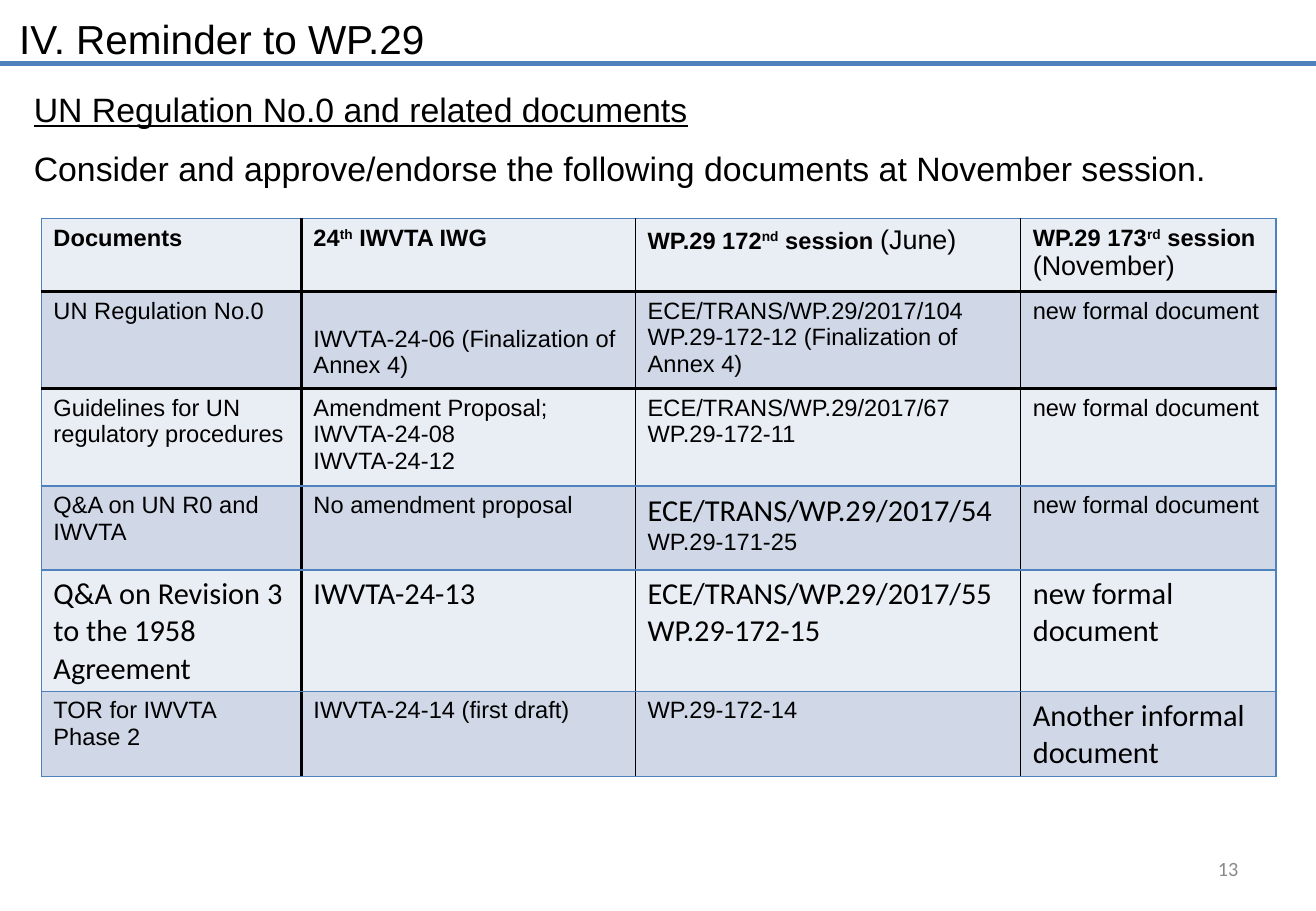
from dataclasses import dataclass, field

from lxml import etree
from pptx import Presentation
from pptx.dml.color import RGBColor
from pptx.enum.shapes import MSO_CONNECTOR
from pptx.enum.text import MSO_ANCHOR, PP_ALIGN
from pptx.oxml.ns import qn
from pptx.util import Inches, Pt

STRAIGHT = MSO_CONNECTOR.STRAIGHT
MIDDLE = MSO_ANCHOR.MIDDLE
TOP = MSO_ANCHOR.TOP
LEFT = PP_ALIGN.LEFT
RIGHT = PP_ALIGN.RIGHT

COLUMNS, ROWS = 108.3, 75


@dataclass(frozen=True)
class Theme:
    black: str = "000000"
    blue: str = "4F81BD"
    bands: tuple = ("E9EDF4", "D0D8E8")
    rule_width: float = 3
    styles: dict = field(default_factory=lambda: {
        "title": {"name": "Arial", "size": Pt(24)},
        "topic": {"name": "Arial", "size": Pt(20), "underline": True},
        "request": {"name": "Arial", "size": Pt(20)},
        "header": {"name": "Arial", "size": Pt(14), "bold": True},
        "ordinal": {"name": "Arial", "size": Pt(14), "bold": True},
        "month": {"name": "Arial", "size": Pt(16), "bold": False},
        "entry": {"name": "Arial", "size": Pt(14), "bold": False},
        "large": {"name": "Calibri", "size": Pt(18), "bold": False},
        "number": {"name": "Calibri", "size": Pt(12)},
    })
    colors: dict = field(default_factory=lambda: {"number": "898989"})


THEME = Theme()
HAIRLINE = (THEME.black, 0.75)
HEAVY = (THEME.black, 2.25)
OUTLINE = (THEME.blue, 1)
COLUMN_EDGES = [OUTLINE, HEAVY, HAIRLINE, HAIRLINE, OUTLINE]
ROW_EDGES = [OUTLINE, HEAVY, HEAVY, OUTLINE, OUTLINE, OUTLINE, OUTLINE]
COLUMN_WIDTHS = [21.4, 27.5, 31.7, 21]
ROW_HEIGHTS = [6, 8, 8, 6.9, 10, 7]
ANNEX_CELL = (1, 1)
ANNEX_TOP = 2.8


def entry(*lines):
    return [[(line, "entry")] for line in lines]


def large(*lines):
    return [[(line, "large")] for line in lines]


def session(number, ordinal, label, month=""):
    runs = [(number, "header"), (ordinal, "ordinal"), (label, "header")]
    return [runs + ([(month, "month")] if month else [])]


DOCUMENTS = [
    [[[("Documents", "header")]],
     session("24", "th", " IWVTA IWG"),
     session("WP.29 172", "nd", " session ", "(June)"),
     session("WP.29 173", "rd", " session ", "(November)")],
    [entry("UN Regulation No.0"),
     entry("IWVTA-24-06 (Finalization of Annex 4)"),
     entry("ECE/TRANS/WP.29/2017/104", "WP.29-172-12 (Finalization of Annex 4)"),
     entry("new formal document")],
    [entry("Guidelines for UN regulatory procedures"),
     entry("Amendment Proposal;", "IWVTA-24-08", "IWVTA-24-12"),
     entry("ECE/TRANS/WP.29/2017/67", "WP.29-172-11"),
     entry("new formal document")],
    [entry("Q&A on UN R0 and IWVTA"),
     entry("No amendment proposal"),
     large("ECE/TRANS/WP.29/2017/54") + entry("WP.29-171-25"),
     entry("new formal document")],
    [large("Q&A on Revision 3", "to the 1958 Agreement"),
     large("IWVTA-24-13"),
     large("ECE/TRANS/WP.29/2017/55", "WP.29-172-15"),
     large("new formal document")],
    [entry("TOR for IWVTA Phase 2"),
     entry("IWVTA-24-14 (first draft)"),
     entry("WP.29-172-14"),
     large("Another informal document")],
]


def grid(units):
    return Inches(units / 10)


def apply_format(target, values):
    for name, value in values.items():
        setattr(target, name, value)


def write_paragraphs(text_frame, paragraphs, **paragraph_format):
    for index, runs in enumerate(paragraphs):
        paragraph = text_frame.add_paragraph() if index else text_frame.paragraphs[0]
        apply_format(paragraph, paragraph_format)
        for text, style in runs:
            run = paragraph.add_run()
            run.text = text
            apply_format(run.font, THEME.styles[style])
            run.font.color.rgb = RGBColor.from_string(THEME.colors.get(style, THEME.black))
            if style == "ordinal":
                run._r.get_or_add_rPr().set("baseline", "30000")


def add_text(slide, box, paragraphs, anchor=TOP, **paragraph_format):
    shape = slide.shapes.add_textbox(*map(grid, box))
    apply_format(shape.text_frame, {"word_wrap": True, "vertical_anchor": anchor})
    write_paragraphs(shape.text_frame, paragraphs, **paragraph_format)


def add_rule(slide, row):
    connector = slide.shapes.add_connector(STRAIGHT, 0, grid(row), grid(COLUMNS), grid(row))
    connector.line.color.rgb = RGBColor.from_string(THEME.blue)
    connector.line.width = Pt(THEME.rule_width)
    etree.SubElement(connector._element.spPr, qn("a:effectLst"))


def set_borders(cell, edges):
    properties = cell._tc.get_or_add_tcPr()
    for side, (color, width) in edges.items():
        line = etree.SubElement(properties, qn(f"a:ln{side}"), w=str(Pt(width)))
        fill = etree.SubElement(line, qn("a:solidFill"))
        etree.SubElement(fill, qn("a:srgbClr"), val=color)


def add_documents_table(slide, left, top):
    table = slide.shapes.add_table(
        len(ROW_HEIGHTS), len(COLUMN_WIDTHS), grid(left), grid(top),
        grid(sum(COLUMN_WIDTHS)), grid(sum(ROW_HEIGHTS))).table
    apply_format(table, {"first_row": False, "horz_banding": False})
    for column, width in zip(table.columns, COLUMN_WIDTHS):
        column.width = grid(width)
    for row, height in zip(table.rows, ROW_HEIGHTS):
        row.height = grid(height)
    for row, contents in enumerate(DOCUMENTS):
        for column, paragraphs in enumerate(contents):
            cell = table.cell(row, column)
            write_paragraphs(cell.text_frame, paragraphs)
            set_borders(cell, {"L": COLUMN_EDGES[column], "R": COLUMN_EDGES[column + 1],
                               "T": ROW_EDGES[row], "B": ROW_EDGES[row + 1]})
            cell.fill.solid()
            cell.fill.fore_color.rgb = RGBColor.from_string(THEME.bands[row % 2])
    table.cell(*ANNEX_CELL).margin_top = grid(ANNEX_TOP)


def main():
    presentation = Presentation()
    apply_format(presentation, {"slide_width": grid(COLUMNS), "slide_height": grid(ROWS)})
    slide = presentation.slides.add_slide(presentation.slide_layouts[6])
    add_text(slide, (77.6, 69.5, 25.3, 4), [[("13", "number")]], MIDDLE, alignment=RIGHT)
    add_rule(slide, 5.2)
    add_text(slide, (0.6, 0.7, 53.5, 5), [[("IV. Reminder to WP.29", "title")]], alignment=LEFT)
    add_text(slide, (1.8, 6.8, 105.1, 9.1), [
        [("UN Regulation No.0 and related documents", "topic")],
        [("Consider and approve/endorse the following documents at November session.",
          "request")],
    ], space_after=Pt(10.8))
    add_documents_table(slide, 3.4, 18)
    presentation.save("out.pptx")


if __name__ == "__main__":
    main()
